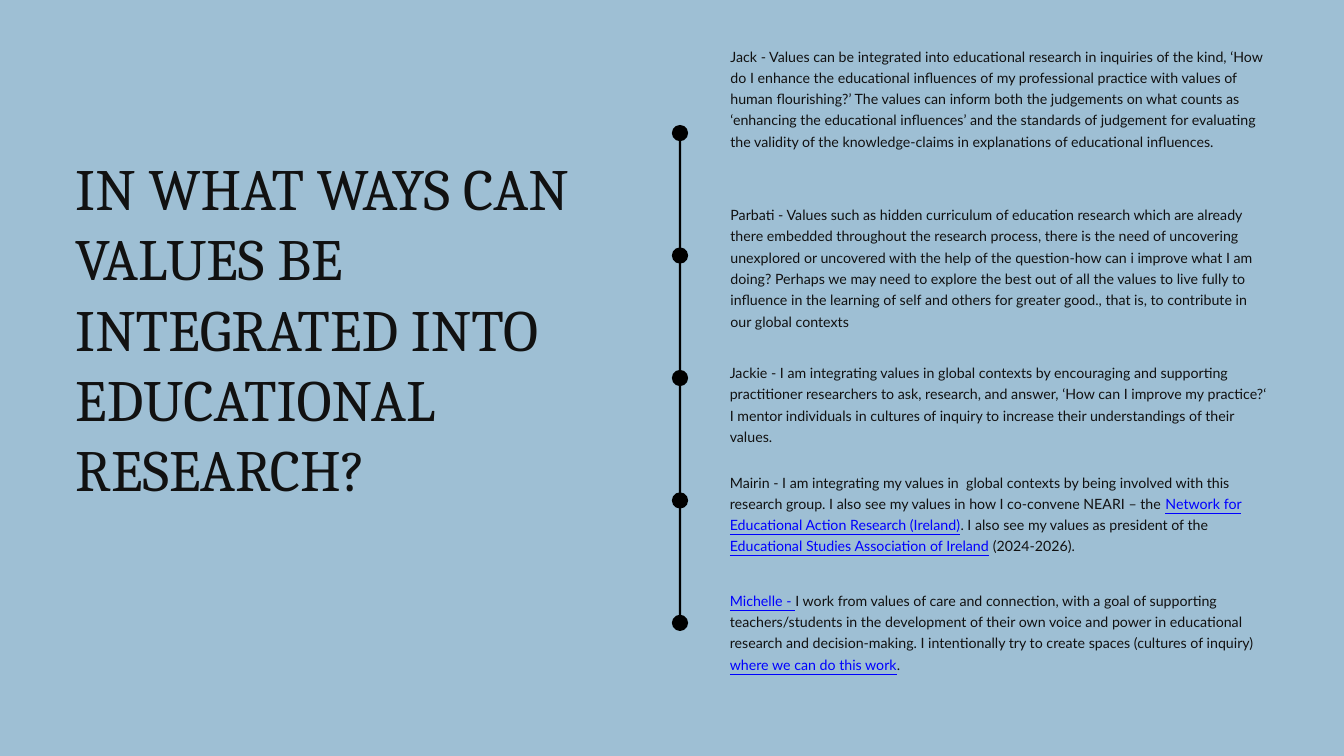
from pptx import Presentation
from pptx.dml.color import RGBColor
from pptx.enum.shapes import MSO_SHAPE
from pptx.util import Pt

INK, LINK, BLACK, SKY = "111111", "0000FF", "000000", "9EBFD4"


def color(code):
    return RGBColor.from_string(code)


class Deck:
    HEAD = {"name": "Cambria", "size": Pt(62.6)}
    BODY = {"name": "Lato", "size": Pt(15.2)}

    def __init__(self, wide, high):
        self.show = Presentation()
        self.show.slide_width, self.show.slide_height = Pt(wide), Pt(high)
        self.slide = self.show.slides.add_slide(self.show.slide_layouts[6])
        back = self.slide.background.fill
        back.solid()
        back.fore_color.rgb = color(SKY)

    def text(self, box, runs, style, pitch):
        """Add a paragraph of (words, is_link) runs with fixed line pitch."""
        frame = self.slide.shapes.add_textbox(*map(Pt, box)).text_frame
        frame.word_wrap = True
        for side in ("left", "top", "right", "bottom"):
            setattr(frame, f"margin_{side}", 0)
        para = frame.paragraphs[0]
        para.line_spacing = Pt(pitch)
        for words, is_link in runs:
            run = para.add_run()
            run.text = words
            for key, value in {**style, "underline": is_link}.items():
                setattr(run.font, key, value)
            run.font.color.rgb = color(LINK if is_link else INK)

    def shape(self, kind, box):
        shape = self.slide.shapes.add_shape(kind, *map(Pt, box))
        shape.shadow.inherit = False
        shape.fill.solid()
        shape.fill.fore_color.rgb = color(BLACK)
        shape.line.fill.background()


TITLE = "IN WHAT WAYS CAN VALUES BE INTEGRATED INTO EDUCATIONAL RESEARCH?"

# Left, top, width, height and runs of each reply
REPLIES = [
    ((782.6, 46.8, 589.7, 133.2), [
        ("Jack - Values can be integrated into educational research in inquiries of the "
         "kind, ‘How do I enhance the educational influences of my professional practice "
         "with values of human flourishing?’ The values can inform both the judgements on "
         "what counts as ‘enhancing the educational influences’ and the standards of "
         "judgement for evaluating the validity of the knowledge-claims in explanations "
         "of educational influences.", False)]),
    ((782.6, 216.7, 576.7, 133.2), [
        ("Parbati - Values such as hidden curriculum of education research which are "
         "already there embedded throughout the research process, there is the need of "
         "uncovering unexplored or uncovered with the help of the question-how can i "
         "improve what I am doing? Perhaps we may need to explore the best out of all the "
         "values to live fully to influence in the learning of self and others for "
         "greater good., that is, to contribute in our global contexts", False)]),
    ((781.9, 385.9, 576.7, 88.6), [
        ("Jackie - I am integrating values in global contexts by encouraging and "
         "supporting practitioner researchers to ask, research, and answer, ‘How can I "
         "improve my practice?‘ I mentor individuals in cultures of inquiry to increase "
         "their understandings of their values.", False)]),
    ((781.9, 503.3, 576.7, 110.9), [
        ("Mairin - I am integrating my values in  global contexts by being involved with "
         "this research group. I also see my values in how I co-convene NEARI – the ", False),
        ("Network for Educational Action Research (Ireland)", True),
        (". I also see my values as president of the ", False),
        ("Educational Studies Association of Ireland", True),
        (" (2024-2026).", False)]),
    ((781.9, 630, 576.7, 90.7), [
        ("Michelle - ", True),
        ("I work from values of care and connection, with a goal of supporting "
         "teachers/students in the development of their own voice and power in "
         "educational research and decision-making. I intentionally try to create spaces "
         "(cultures of inquiry) ", False),
        ("where we can do this work", True),
        (".", False)]),
]


def main():
    deck = Deck(1440, 810)
    deck.text((80.6, 163.4, 560.2, 450.7), [(TITLE, False)], Deck.HEAD, 75.1)
    for box, runs in REPLIES:
        deck.text(box, runs, Deck.BODY, 22.8)

    mid, first, step, size, thick = 728.6, 142.6, 131.2, 17.4, 2.2
    span = step * (len(REPLIES) - 1)
    deck.shape(MSO_SHAPE.RECTANGLE, (mid - thick / 2, first, thick, span))
    for place in range(len(REPLIES)):
        top = first + place * step - size / 2
        deck.shape(MSO_SHAPE.OVAL, (mid - size / 2, top, size, size))

    deck.show.save("out.pptx")


if __name__ == "__main__":
    main()
